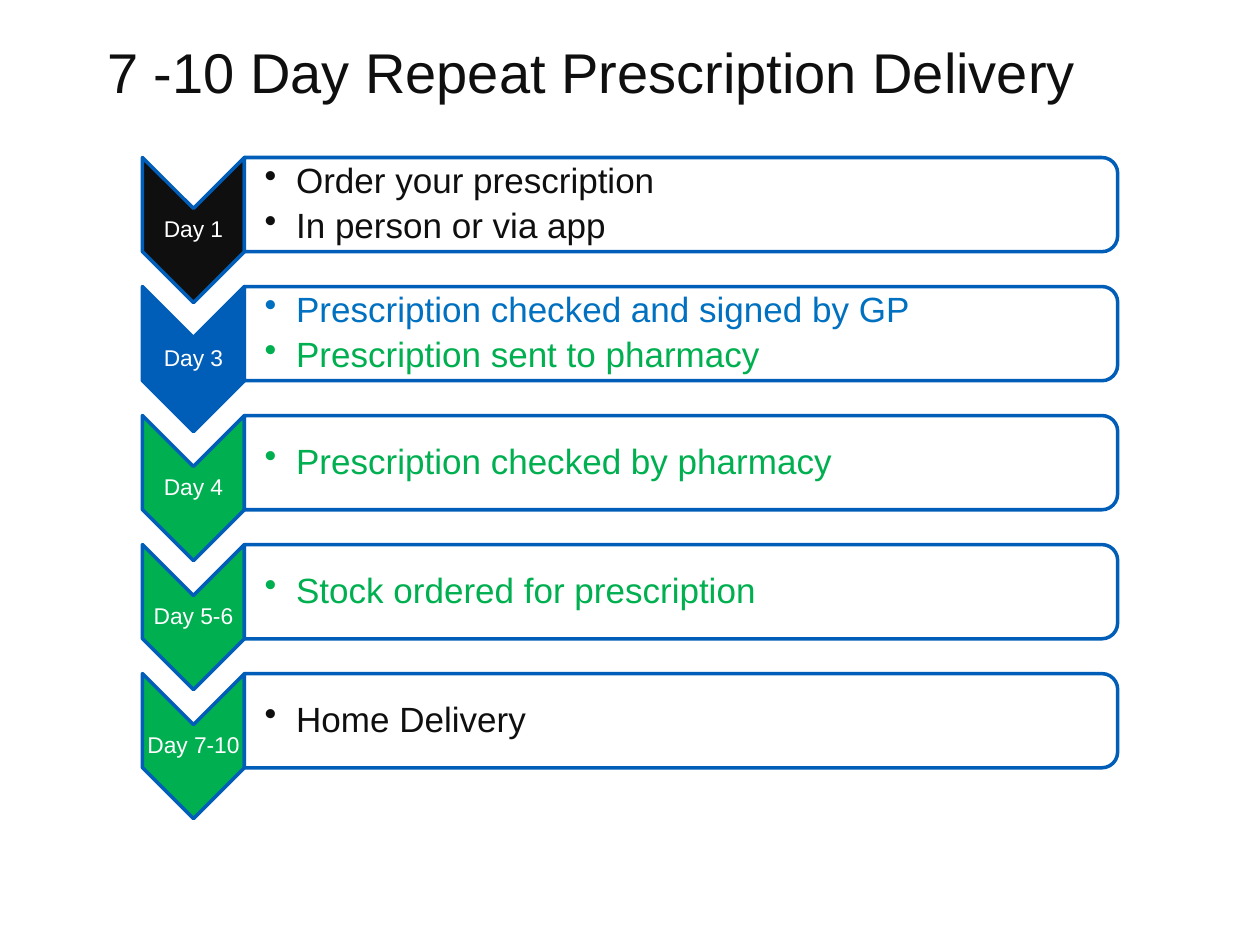
from collections import namedtuple
from dataclasses import dataclass

from lxml.etree import SubElement
from pptx import Presentation
from pptx.dml.color import RGBColor as RGB
from pptx.enum.shapes import MSO_SHAPE as Shape
from pptx.enum.text import MSO_ANCHOR as Anchor, MSO_AUTO_SIZE as Fit, PP_ALIGN as Align
from pptx.oxml.ns import qn
from pptx.util import Inches, Pt


@dataclass(frozen=True)
class Theme:
    font: str = "Arial"
    ink: str = "0F0F0F"
    blue: str = "005EB8"
    sky: str = "0070C0"
    green: str = "00B050"
    white: str = "FFFFFF"
    title: int = 32
    body: int = 20
    label: int = 13
    line: int = 2


T = Theme()
Box = namedtuple("Box", "x y w h")
FLOW = Box(1.13, 1.25, 7.74, 5.12)
STEPS = [
    ("Day 1", T.ink, [("Order your prescription", T.ink), ("In person or via app", T.ink)]),
    ("Day 3", T.blue, [("Prescription checked and signed by GP", T.sky),
                       ("Prescription sent to pharmacy", T.green)]),
    ("Day 4", T.green, [("Prescription checked by pharmacy", T.green)]),
    ("Day 5-6", T.green, [("Stock ordered for prescription", T.green)]),
    ("Day 7-10", T.green, [("Home Delivery", T.ink)]),
]


def place(box):
    return [Inches(v) for v in box]


def style(para, size, color):
    font = para.runs[0].font
    font.name, font.size = T.font, Pt(size)
    font.color.rgb = RGB.from_string(color)


def turned(parts, kind, box, fill):
    """Add a shape turned by 90 degrees so that it fills the box."""
    x, y, w, h = box
    shape = parts.add_shape(kind, *place((x + (w - h) / 2, y + (h - w) / 2, h, w)))
    shape.rotation = 90
    shape.shadow.inherit = False
    shape.fill.solid()
    shape.fill.fore_color.rgb = RGB.from_string(fill)
    shape.line.color.rgb = RGB.from_string(T.blue)
    shape.line.width = Pt(T.line)
    return shape


def text_box(parts, box, left=0.01):
    frame = parts.add_textbox(*place(box)).text_frame
    frame.word_wrap = True
    frame.vertical_anchor = Anchor.MIDDLE
    frame.margin_left = Inches(left)
    frame.margin_top = frame.margin_right = frame.margin_bottom = Inches(0.01)
    return frame


def bullet(para):
    props = para._p.get_or_add_pPr()
    props.set("marL", str(Inches(0.25)))
    props.set("indent", str(-Inches(0.25)))
    SubElement(props, qn("a:buChar")).set("char", "•")


def add_day(parts, box, day, fill):
    turned(parts, Shape.CHEVRON, box, fill)
    frame = text_box(parts, Box(box.x, box.y + box.h * 0.35, box.w, box.h * 0.3))
    frame.text = day
    para = frame.paragraphs[0]
    para.alignment, para.line_spacing = Align.CENTER, 0.9
    style(para, T.label, T.white)


def add_tasks(parts, box, tasks):
    panel = turned(parts, Shape.ROUND_2_SAME_RECTANGLE, box, T.white)
    color = panel.fill._xPr.find(".//" + qn("a:srgbClr"))
    SubElement(color, qn("a:alpha")).set("val", "90000")
    inset = box.h * 0.05
    frame = text_box(parts, Box(box.x, box.y + inset, box.w - inset, box.h - 2 * inset), 0.16)
    frame.text = "\n".join(words for words, _ in tasks)
    for para, (_, color) in zip(frame.paragraphs, tasks):
        para.line_spacing, para.space_after = 0.9, Pt(4)
        bullet(para)
        style(para, T.body, color)


def add_flow(slide, box, steps):
    parts = slide.shapes.add_group_shape().shapes
    row = box.h / len(steps)
    day_w = 0.81
    for i, (day, fill, tasks) in enumerate(steps):
        top = box.y + i * row
        add_day(parts, Box(box.x, top, day_w, row * 1.125), day, fill)
        add_tasks(parts, Box(box.x + day_w, top, box.w - day_w, row * 0.73), tasks)


def add_title(slide, box, words):
    title = slide.shapes.title
    title.left, title.top, title.width, title.height = place(box)
    frame = title.text_frame
    frame.text = words
    frame.word_wrap, frame.auto_size = True, Fit.NONE
    frame.vertical_anchor = Anchor.TOP
    frame.paragraphs[0].alignment = Align.LEFT
    style(frame.paragraphs[0], T.title, T.ink)


def main():
    deck = Presentation()
    deck.slide_width, deck.slide_height = Inches(10), Inches(7.5)
    slide = deck.slides.add_slide(deck.slide_layouts[5])
    add_title(slide, Box(0.75, 0.25, 8.33, 0.64), "7 -10 Day Repeat Prescription Delivery")
    add_flow(slide, FLOW, STEPS)
    deck.save("out.pptx")


if __name__ == "__main__":
    main()
